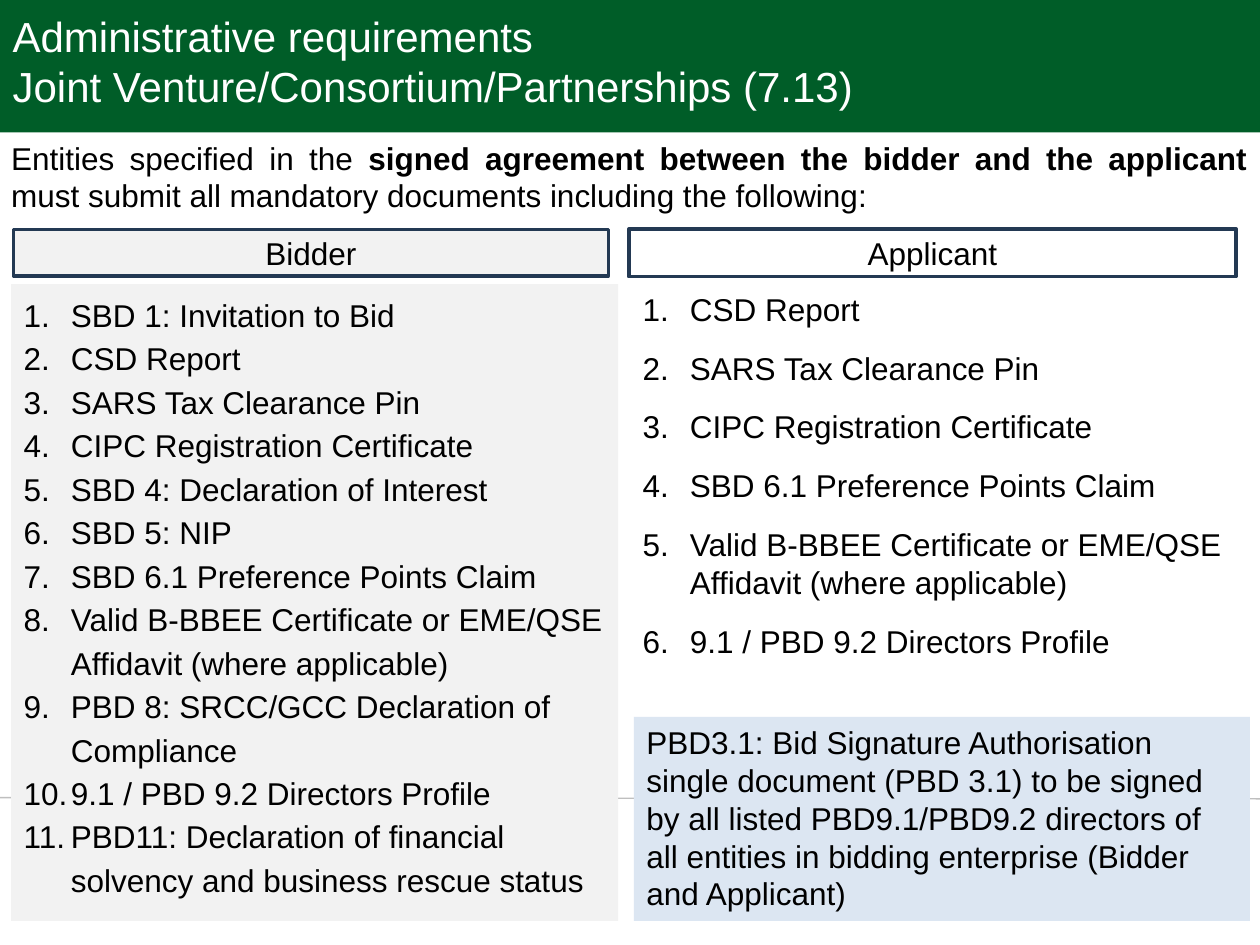
from dataclasses import dataclass

from lxml import etree
from pptx import Presentation
from pptx import util as u
from pptx.dml.color import RGBColor
from pptx.enum import shapes, text
from pptx.oxml.ns import qn


@dataclass(frozen=True)
class Theme:
    """Colours, typeface and type sizes of the slide."""
    font: str = "Arial"
    heading: int = 24
    body: int = 18
    green: str = "005D28"
    white: str = "FFFFFF"
    black: str = "000000"
    grey: str = "F2F2F2"
    blue: str = "DCE6F2"
    navy: str = "233953"
    rule: str = "BFBFBF"


class SlideBuilder:
    """Draws themed elements on the current slide, with lengths in points."""

    def __init__(self, slide, theme):
        self.slide = slide
        self.theme = theme

    def paint(self, shape, fill):
        """Fill a shape, or clear it when no colour is given."""
        if fill:
            shape.fill.solid()
            shape.fill.fore_color.rgb = RGBColor.from_string(fill)
        else:
            shape.fill.background()

    def typeset(self, frame, paragraphs, size, colour, align=text.PP_ALIGN.LEFT,
                anchor=text.MSO_ANCHOR.TOP):
        """Set paragraphs given as lists of (words, bold) runs."""
        frame.word_wrap = True
        frame.auto_size = text.MSO_AUTO_SIZE.NONE
        frame.vertical_anchor = anchor
        for index, runs in enumerate(paragraphs):
            paragraph = frame.add_paragraph() if index else frame.paragraphs[0]
            paragraph.alignment = align
            paragraph.space_before = paragraph.space_after = u.Pt(0)
            for words, bold in runs:
                run = paragraph.add_run()
                run.text = words
                run.font.name = self.theme.font
                run.font.size = u.Pt(size)
                run.font.bold = bold
                run.font.color.rgb = RGBColor.from_string(colour)

    def panel(self, box, fill=None, outline=None, paragraphs=(), **layout):
        """Add a rectangle with optional outline and words."""
        panel = self.slide.shapes.add_shape(
            shapes.MSO_SHAPE.RECTANGLE, *map(u.Pt, box))
        panel.shadow.inherit = False
        self.paint(panel, fill)
        if outline:
            panel.line.color.rgb = RGBColor.from_string(outline)
            panel.line.width = u.Pt(2)
        else:
            panel.line.fill.background()
        if paragraphs:
            self.typeset(panel.text_frame, paragraphs, self.theme.body,
                         self.theme.black, **layout)

    def label(self, box, words, fill=None):
        """Add an outlined column heading."""
        self.panel(box, fill, self.theme.navy, [[(words, False)]],
                   align=text.PP_ALIGN.CENTER, anchor=text.MSO_ANCHOR.MIDDLE)

    def rule(self, start, end):
        """Add a thin straight line."""
        rule = self.slide.shapes.add_connector(
            shapes.MSO_CONNECTOR.STRAIGHT, *map(u.Pt, start + end))
        rule.line.color.rgb = RGBColor.from_string(self.theme.rule)
        rule.line.width = u.Pt(0.75)
        etree.SubElement(rule._element.spPr, qn("a:effectLst"))

    def place(self, holder, box):
        """Move a placeholder to its box, in front of what is drawn so far."""
        holder.left, holder.top, holder.width, holder.height = map(u.Pt, box)
        tree = holder._element.getparent()
        tree.append(holder._element)

    def title(self, box, lines):
        """Fill the title placeholder."""
        title = self.slide.shapes.title
        self.place(title, box)
        self.typeset(title.text_frame, [[(line, False)] for line in lines],
                     self.theme.heading, self.theme.white)

    def numbered(self, slot, box, items, fill=None, spacing=1.0, gap=0, last_gap=0):
        """Fill a body placeholder with a numbered list."""
        holder = self.slide.placeholders[slot]
        self.place(holder, box)
        self.paint(holder, fill)
        self.typeset(holder.text_frame, [[(item, False)] for item in items],
                     self.theme.body, self.theme.black)
        for index, paragraph in enumerate(holder.text_frame.paragraphs):
            properties = paragraph._p.get_or_add_pPr()
            properties.set("marL", str(u.Pt(27)))
            properties.set("indent", str(u.Pt(-27)))
            etree.SubElement(properties, qn("a:buFont"), typeface="+mj-lt")
            etree.SubElement(properties, qn("a:buAutoNum"), type="arabicPeriod")
            paragraph.line_spacing = spacing
            paragraph.space_before = u.Pt(gap if index else 0)
            paragraph.space_after = u.Pt(gap)
        paragraph.space_after = u.Pt(last_gap)


def main():
    """Build the joint venture requirements slide."""
    deck = Presentation()
    deck.slide_width, deck.slide_height = u.Pt(720), u.Pt(540)
    theme = Theme()
    page = SlideBuilder(deck.slides.add_slide(deck.slide_layouts[3]), theme)

    page.panel((0, 0, 720, 84.2), theme.green)
    page.rule((0, 455.8), (720, 456.5))
    page.panel((0, 457.2, 720, 82), theme.white)
    page.title((0, 2.2, 575.3, 65.5), [
        "Administrative requirements",
        "Joint Venture/Consortium/Partnerships (7.13)",
    ])
    page.panel((-0.7, 75.6, 720.7, 51), theme.white, paragraphs=[[
        ("Entities specified in the ", False),
        ("signed agreement between the bidder and the applicant", True),
        (" must submit all mandatory documents including the following:", False),
    ]], align=text.PP_ALIGN.JUSTIFY)
    page.panel((362.3, 409.7, 352, 116.6), theme.blue, paragraphs=[
        [("PBD3.1: Bid Signature Authorisation", False)],
        [("single document (PBD 3.1) to be signed by all listed PBD9.1/PBD9.2 "
          "directors of all entities in bidding enterprise (Bidder and Applicant)",
          False)],
    ])

    preference = "SBD 6.1 Preference Points Claim"
    affidavit = "Valid B-BBEE Certificate or EME/QSE Affidavit (where applicable)"
    profile = "9.1 / PBD 9.2 Directors Profile"
    registration = ["CSD Report", "SARS Tax Clearance Pin",
                    "CIPC Registration Certificate"]

    page.label((7.7, 131.2, 340, 26.5), "Bidder", theme.grey)
    page.numbered(2, (360, 162, 347, 220.3),
                  registration + [preference, affidavit, profile],
                  gap=6, last_gap=6)
    page.label((359.3, 130.9, 347, 27.2), "Applicant")
    page.numbered(1, (6.3, 162.3, 347, 364), [
        "SBD 1: Invitation to Bid",
        *registration,
        "SBD 4: Declaration of Interest",
        "SBD 5: NIP",
        preference,
        affidavit,
        "PBD 8: SRCC/GCC Declaration of Compliance",
        profile,
        "PBD11: Declaration of financial solvency and business rescue status",
    ], theme.grey, spacing=1.15, last_gap=8)
    deck.save("out.pptx")


if __name__ == "__main__":
    main()
